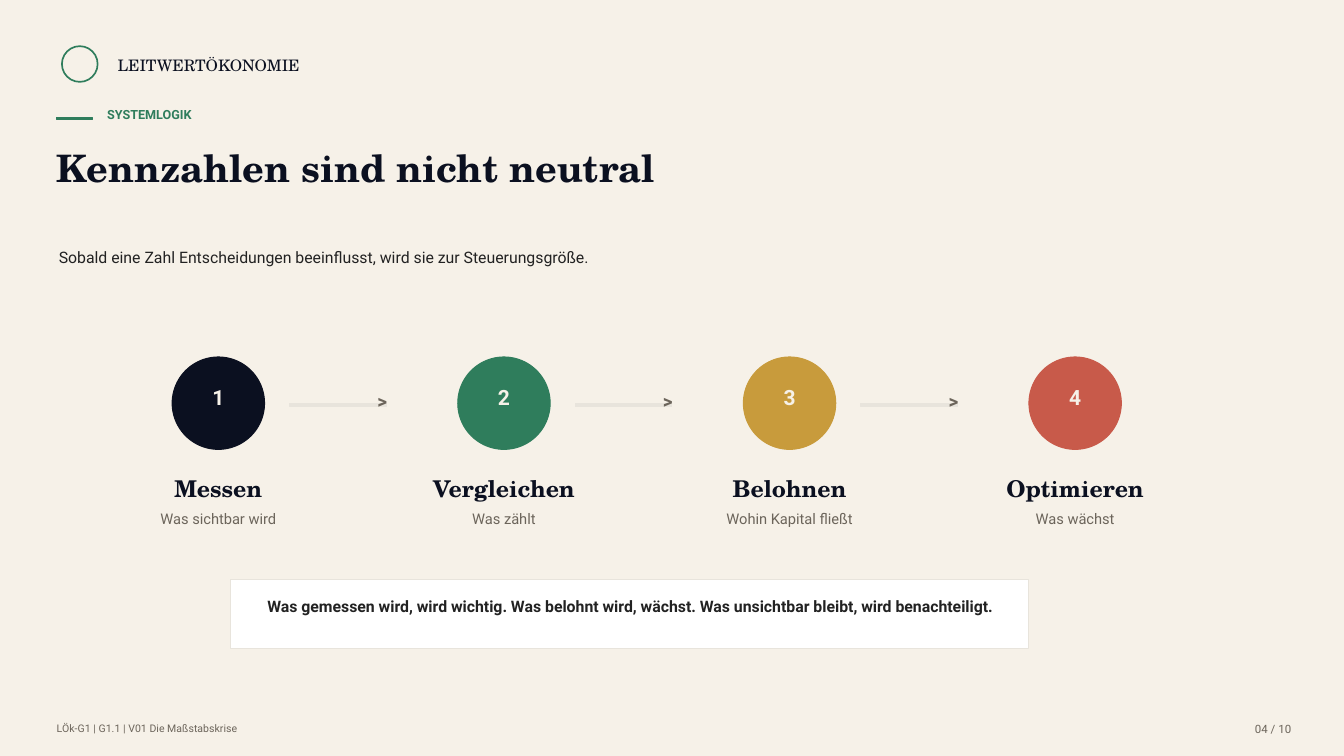
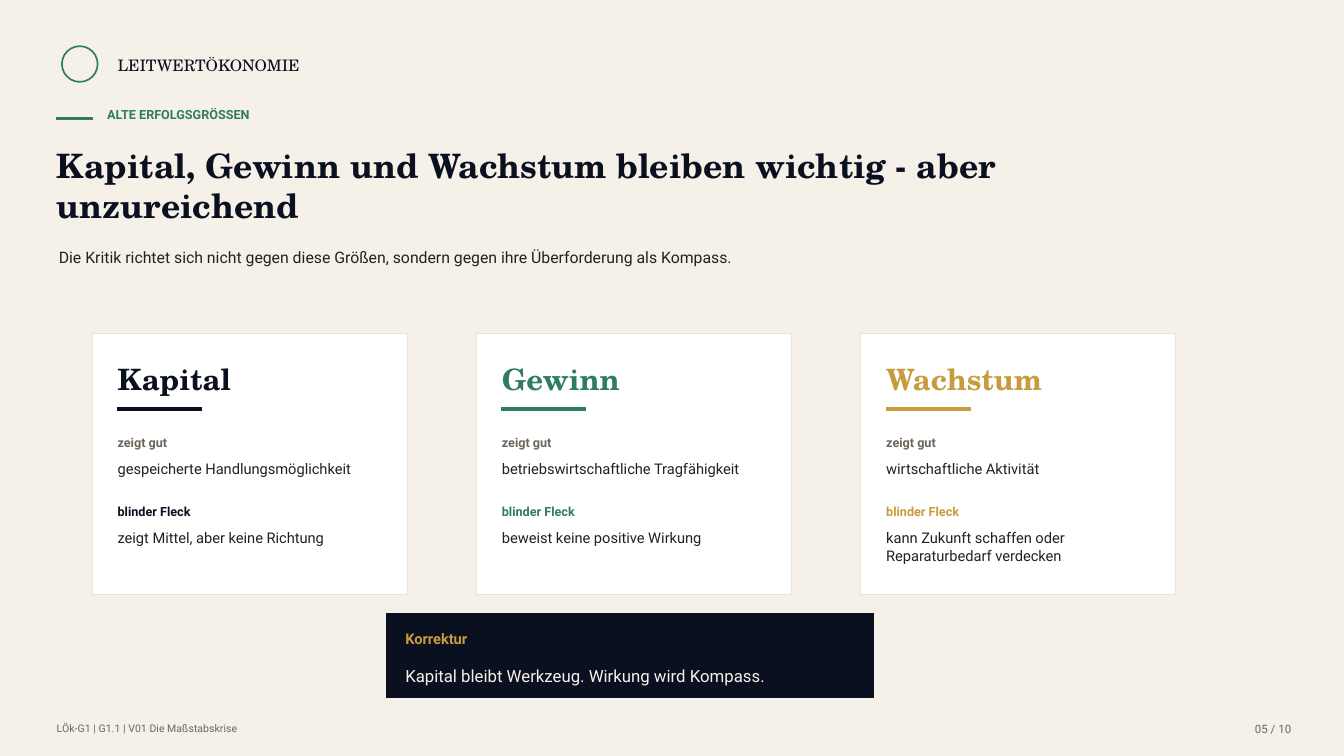
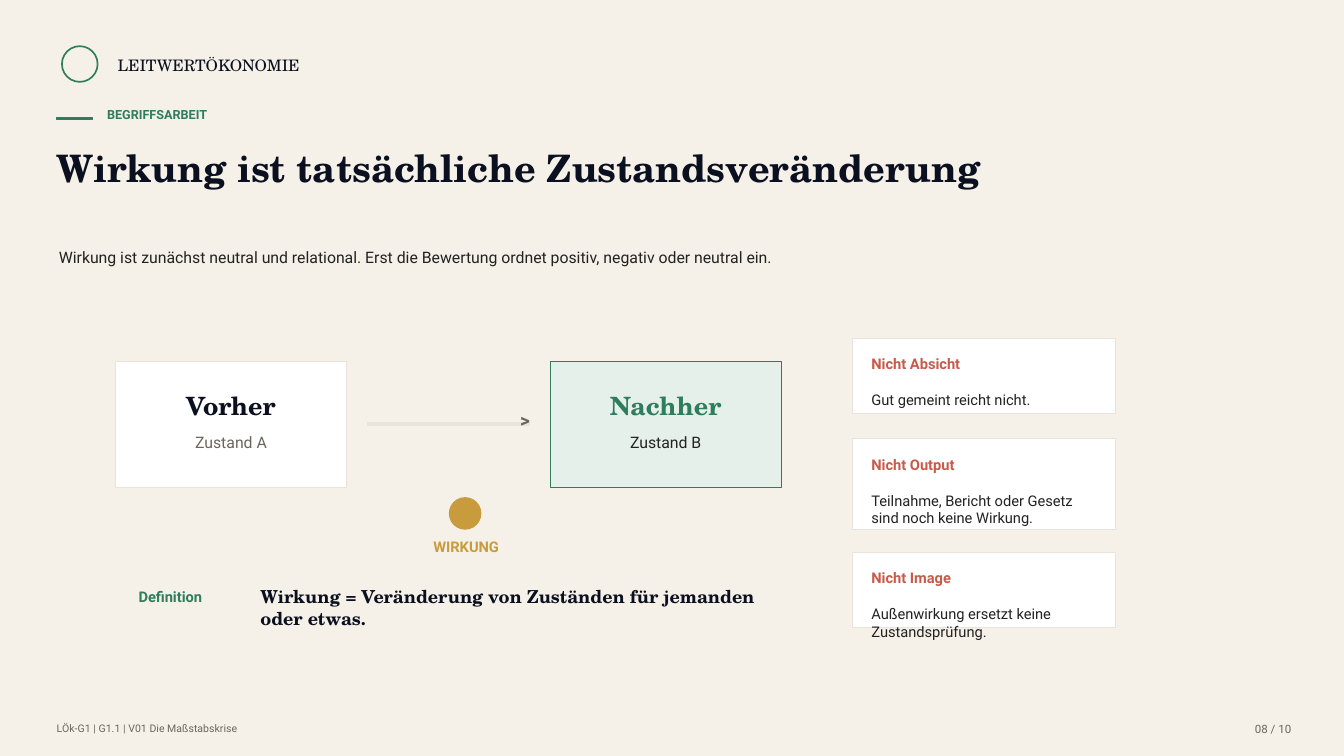
import pptx
import pptx.dml.color
import pptx.enum.shapes
import pptx.enum.text
import pptx.util

PX = 9525
SLIDE_W, SLIDE_H = 1280, 720

COLORS = {
    "paper": "F6F1E8",
    "navy": "0B1020",
    "green": "2F7D5C",
    "mint": "E5F0EA",
    "gold": "C89B3C",
    "red": "C85A4A",
    "ink": "222222",
    "muted": "6C655B",
    "border": "E8E4DC",
    "white": "FFFFFF",
}

SERIF, SANS = "TeX Gyre Schola", "Roboto"


def font_style(name, size, bold=False):
    return {"name": name, "size": pptx.util.Pt(size), "bold": bold}


STYLES = {
    "wordmark": font_style(SERIF, 11.25),
    "eyebrow": font_style(SANS, 9, True),
    "title": font_style(SERIF, 27, True),
    "long_title": font_style(SERIF, 24, True),
    "lead": font_style(SANS, 11.25),
    "claim": font_style(SANS, 11.25, True),
    "body": font_style(SANS, 10.5),
    "heading": font_style(SANS, 10.5, True),
    "callout": font_style(SANS, 12),
    "number": font_style(SANS, 15, True),
    "arrowhead": font_style(SANS, 13.5, True),
    "step": font_style(SERIF, 16.5, True),
    "card": font_style(SERIF, 21, True),
    "state": font_style(SERIF, 18, True),
    "definition": font_style(SERIF, 12.75, True),
    "footer": font_style(SANS, 7.5),
    "page": font_style(SANS, 8.25),
}

FRAME = {
    "word_wrap": True,
    "margin_left": 0,
    "margin_top": 0,
    "margin_right": 0,
    "margin_bottom": 0,
    "vertical_anchor": pptx.enum.text.MSO_ANCHOR.TOP,
}

LEFT = pptx.enum.text.PP_ALIGN.LEFT
CENTER = pptx.enum.text.PP_ALIGN.CENTER
RIGHT = pptx.enum.text.PP_ALIGN.RIGHT
RECT = pptx.enum.shapes.MSO_SHAPE.RECTANGLE
OVAL = pptx.enum.shapes.MSO_SHAPE.OVAL


def rgb(color):
    return pptx.dml.color.RGBColor.from_string(COLORS[color])


def emu(*lengths):
    return [length * PX for length in lengths]


def set_all(target, values):
    for attribute, value in values.items():
        setattr(target, attribute, value)


def add_text(slide, box, text, style, color, align=LEFT):
    frame = slide.shapes.add_textbox(*emu(*box)).text_frame
    set_all(frame, FRAME)
    paragraph = frame.paragraphs[0]
    paragraph.alignment = align
    run = paragraph.add_run()
    run.text = text
    set_all(run.font, STYLES[style])
    run.font.color.rgb = rgb(color)


def add_figure(slide, kind, box, fill, line=None, weight=0.75):
    """Draw a preset shape; fill None leaves it open, line defaults to the fill."""
    figure = slide.shapes.add_shape(kind, *emu(*box))
    figure.shadow.inherit = False
    if fill:
        figure.fill.solid()
        figure.fill.fore_color.rgb = rgb(fill)
    else:
        figure.fill.background()
    figure.line.color.rgb = rgb(line or fill)
    figure.line.width = pptx.util.Pt(weight)


def add_bar(slide, box, color):
    add_figure(slide, RECT, box, color, weight=0)


def add_header(slide, left, top, eyebrow, title, lead, title_style):
    add_figure(slide, OVAL, (left + 5, top, 34, 34), None, "green", 1.2)
    add_text(slide, (left + 58, top + 9, 250, 22), "LEITWERTÖKONOMIE", "wordmark", "navy")
    add_bar(slide, (left, top + 68, 34, 2), "green")
    add_text(slide, (left + 48, top + 58, 420, 24), eyebrow, "eyebrow", "green")
    add_text(slide, (left, top + 94, 900, 86), title, title_style, "navy")
    add_text(slide, (left + 2, top + 192, 800, 42), lead, "lead", "ink")


def add_footer(slide, left, top, page):
    add_text(slide, (left, top, 520, 18), "LÖk-G1 | G1.1 | V01 Die Maßstabskrise",
             "footer", "muted")
    add_text(slide, (left + 1110, top, 66, 18), f"{page:02d} / 10", "page", "muted", RIGHT)


def start_slide(deck, page, eyebrow, title, lead, title_style="title"):
    slide = deck.slides.add_slide(deck.slide_layouts[6])
    slide.background.fill.solid()
    slide.background.fill.fore_color.rgb = rgb("paper")
    add_header(slide, 54, 44, eyebrow, title, lead, title_style)
    add_footer(slide, 54, 688, page)
    return slide


def add_arrow(slide, left, top, length):
    add_bar(slide, (left, top, length, 3), "border")
    add_text(slide, (left + length - 15, top - 13, 22, 24), ">", "arrowhead", "muted", CENTER)


def add_step(slide, left, top, number, name, question, color):
    add_figure(slide, OVAL, (left + 54, top, 88, 88), color)
    add_text(slide, (left + 54, top + 26, 88, 26), str(number), "number", "paper", CENTER)
    add_text(slide, (left, top + 112, 196, 26), name, "step", "navy", CENTER)
    add_text(slide, (left, top + 146, 196, 34), question, "body", "muted", CENTER)


def add_claim(slide, box, text):
    left, top, width, height = box
    add_figure(slide, RECT, box, "white", "border")
    add_text(slide, (left + 30, top + 16, width - 60, height - 32), text, "claim", "ink", CENTER)


def add_measure_card(slide, box, name, strength, blind_spot, color):
    left, top, width, _ = box
    inner = left + 24
    add_figure(slide, RECT, box, "white", "border")
    add_text(slide, (inner, top + 26, width - 60, 30), name, "card", color)
    add_bar(slide, (inner, top + 70, 80, 3), color)
    findings = [("zeigt gut", strength, "muted"), ("blinder Fleck", blind_spot, color)]
    for row, (label, finding, label_color) in enumerate(findings):
        row_top = top + 96 + 66 * row
        add_text(slide, (inner, row_top, 120, 18), label, "eyebrow", label_color)
        add_text(slide, (inner, row_top + 24, width - 62, 34), finding, "body", "ink")


def add_note(slide, box, heading, body, heading_color, body_color="ink",
             body_style="body", fill="white", line="border"):
    left, top, width, height = box
    add_figure(slide, RECT, box, fill, line)
    add_text(slide, (left + 18, top + 16, width - 36, 24), heading, "heading", heading_color)
    add_text(slide, (left + 18, top + 50, width - 36, height - 64), body, body_style, body_color)


def add_state(slide, box, name, state, name_color, state_color, fill, line):
    left, top, width, _ = box
    add_figure(slide, RECT, box, fill, line)
    add_text(slide, (left + 32, top + 28, width - 64, 24), name, "state", name_color, CENTER)
    add_text(slide, (left + 32, top + 68, width - 64, 20), state, "lead", state_color, CENTER)


def add_change(slide, left, top):
    """Show the change from one state to the next."""
    add_state(slide, (left, top, 220, 120), "Vorher", "Zustand A",
              "navy", "muted", "white", "border")
    add_arrow(slide, left + 240, top + 58, 154)
    add_state(slide, (left + 414, top, 220, 120), "Nachher", "Zustand B",
              "green", "ink", "mint", "green")
    add_figure(slide, OVAL, (left + 318, top + 130, 30, 30), "gold")
    add_text(slide, (left + 276, top + 168, 116, 20), "WIRKUNG", "heading", "gold", CENTER)


def add_definition(slide, left, top, text):
    add_text(slide, (left, top + 2, 110, 26), "Definition", "heading", "green")
    add_text(slide, (left + 116, top, 500, 42), text, "definition", "navy")


def build_metrics_slide(deck):
    slide = start_slide(
        deck, 4, "SYSTEMLOGIK", "Kennzahlen sind nicht neutral",
        "Sobald eine Zahl Entscheidungen beeinflusst, wird sie zur Steuerungsgröße.")
    steps = [
        ("Messen", "Was sichtbar wird", "navy"),
        ("Vergleichen", "Was zählt", "green"),
        ("Belohnen", "Wohin Kapital fließt", "gold"),
        ("Optimieren", "Was wächst", "red"),
    ]
    for index, step in enumerate(steps):
        left = 110 + 272 * index
        add_step(slide, left, 340, index + 1, *step)
        if index < len(steps) - 1:
            add_arrow(slide, left + 166, 384, 92)
    add_claim(slide, (220, 552, 760, 66),
              "Was gemessen wird, wird wichtig. Was belohnt wird, wächst. "
              "Was unsichtbar bleibt, wird benachteiligt.")


def build_success_slide(deck):
    slide = start_slide(
        deck, 5, "ALTE ERFOLGSGRÖSSEN",
        "Kapital, Gewinn und Wachstum bleiben wichtig - aber unzureichend",
        "Die Kritik richtet sich nicht gegen diese Größen, "
        "sondern gegen ihre Überforderung als Kompass.", "long_title")
    measures = [
        ("Kapital", "gespeicherte Handlungsmöglichkeit",
         "zeigt Mittel, aber keine Richtung", "navy"),
        ("Gewinn", "betriebswirtschaftliche Tragfähigkeit",
         "beweist keine positive Wirkung", "green"),
        ("Wachstum", "wirtschaftliche Aktivität",
         "kann Zukunft schaffen oder Reparaturbedarf verdecken", "gold"),
    ]
    for index, measure in enumerate(measures):
        add_measure_card(slide, (88 + 366 * index, 318, 300, 248), *measure)
    add_note(slide, (368, 584, 464, 80), "Korrektur",
             "Kapital bleibt Werkzeug. Wirkung wird Kompass.",
             "gold", "paper", "callout", "navy", "navy")


def build_effect_slide(deck):
    slide = start_slide(
        deck, 8, "BEGRIFFSARBEIT", "Wirkung ist tatsächliche Zustandsveränderung",
        "Wirkung ist zunächst neutral und relational. "
        "Erst die Bewertung ordnet positiv, negativ oder neutral ein.")
    add_change(slide, 110, 344)
    exclusions = [
        (322, 72, "Nicht Absicht", "Gut gemeint reicht nicht."),
        (418, 86, "Nicht Output", "Teilnahme, Bericht oder Gesetz sind noch keine Wirkung."),
        (526, 72, "Nicht Image", "Außenwirkung ersetzt keine Zustandsprüfung."),
    ]
    for top, height, heading, reason in exclusions:
        add_note(slide, (812, top, 250, height), heading, reason, "red")
    add_definition(slide, 132, 558,
                   "Wirkung = Veränderung von Zuständen für jemanden oder etwas.")


def main():
    deck = pptx.Presentation()
    deck.slide_width, deck.slide_height = emu(SLIDE_W, SLIDE_H)
    for build in (build_metrics_slide, build_success_slide, build_effect_slide):
        build(deck)
    deck.save("out.pptx")


if __name__ == "__main__":
    main()
